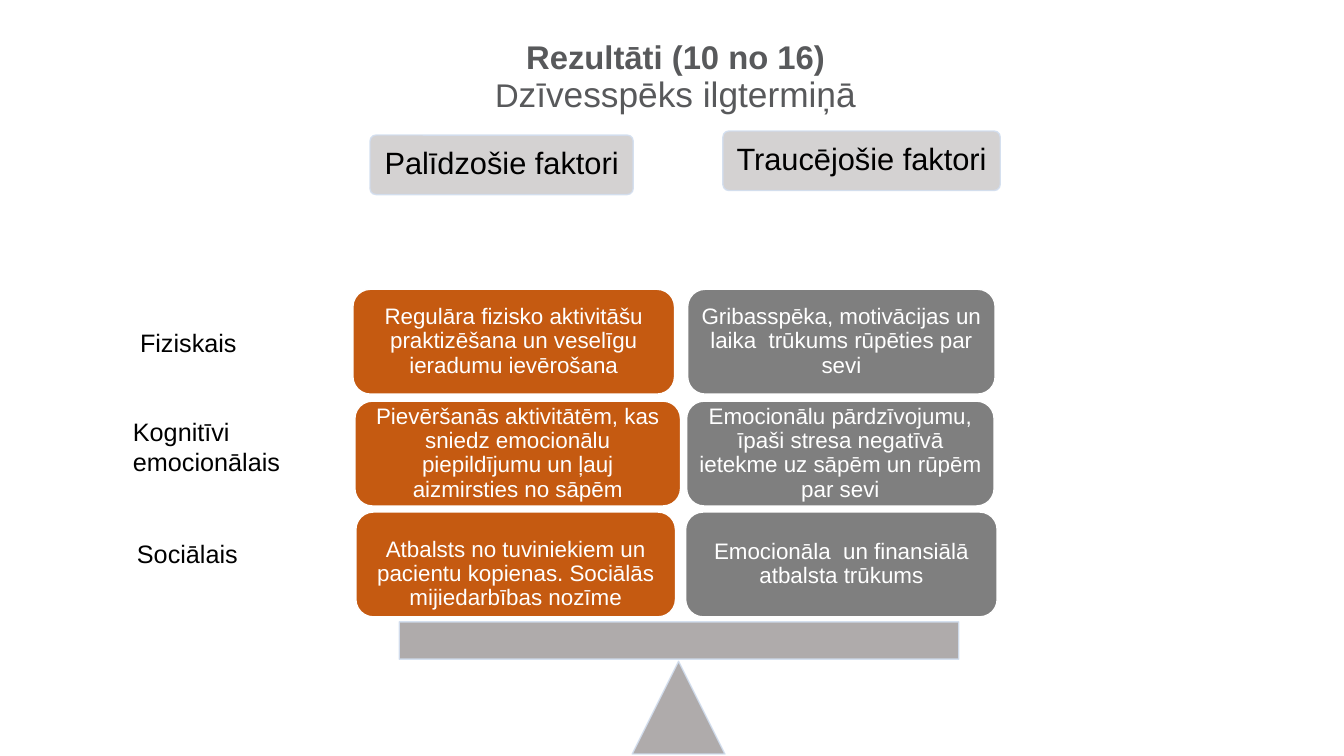
from lxml import etree
from pptx import Presentation
from pptx import util as u
from pptx.dml.color import RGBColor
from pptx.enum import shapes, text
from pptx.oxml.ns import qn

PX = u.Inches(1) // 100
FONT = "Arial"
WHITE, BLACK, TITLE = "FFFFFF", "000000", "58595B"
ORANGE, GREY, PALE, STONE, EDGE = "C55A11", "7F7F7F", "D0CECE", "AFABAB", "D2DEEF"

TITLE_LINES = [
    [("Rezultāti (10 no 16)", 23.4, True)],
    [("D", 23.4, False), ("zīvesspēks ilgtermiņā", 25.2, False)],
]
HEADERS = [
    ("Palīdzošie faktori", 367, 134, 261),
    ("Traucējošie faktori", 717, 130, 275),
]
LABELS = [
    ("Fiziskais", 129, 320, 162, 40),
    ("Kognitīvi emocionālais", 122, 408, 169, 71),
    ("Sociālais", 126, 529, 162, 40),
]
ROW_TOPS = [287, 398, 508]
ROW_HEIGHT = 104
FACTORS = [
    (ORANGE, [
        ("Regulāra fizisko aktivitāšu praktizēšana un veselīgu ieradumu ievērošana", 350, 319, 7),
        ("Pievēršanās aktivitātēm, kas sniedz emocionālu piepildījumu un ļauj aizmirsties no sāpēm", 352, 323, 7),
        ("Atbalsts no tuviniekiem un pacientu kopienas. Sociālās mijiedarbības nozīme", 353, 317, 20),
    ]),
    (GREY, [
        ("Gribasspēka, motivācijas un laika  trūkums rūpēties par sevi", 682, 305, 7),
        ("Emocionālu pārdzīvojumu, īpaši stresa negatīvā ietekme uz sāpēm un rūpēm par sevi", 681, 305, 7),
        ("Emocionāla  un finansiālā atbalsta trūkums", 680, 309, 7),
    ]),
]
BALANCE = [
    (shapes.MSO_SHAPE.ISOSCELES_TRIANGLE, 627, 656, 92, 92),
    (shapes.MSO_SHAPE.RECTANGLE, 396, 617, 555, 37),
]


def box(*lengths):
    return [n * PX for n in lengths]


def paint(fmt, color, alpha=100):
    fmt.solid()
    fmt.fore_color.rgb = RGBColor.from_string(color)
    if alpha < 100:
        clr = fmt._xPr.find(qn("a:solidFill"))[0]
        etree.SubElement(clr, qn("a:alpha"), val=str(alpha * 1000))


def add_run(p, words, size=18, color=BLACK, bold=False):
    r = p.add_run()
    r.text = words
    r.font.name, r.font.size, r.font.bold = FONT, u.Pt(size), bold
    r.font.color.rgb = RGBColor.from_string(color)


def write(sp, words, size=18, color=BLACK, align=text.PP_ALIGN.CENTER,
          anchor=text.MSO_ANCHOR.MIDDLE, spacing=0.9, insets=(7, 7, 7, 7)):
    tf = sp.text_frame
    tf.word_wrap = True
    tf.vertical_anchor = anchor
    tf.margin_left, tf.margin_top, tf.margin_right, tf.margin_bottom = box(*insets)
    p = tf.paragraphs[0]
    p.alignment, p.line_spacing = align, spacing
    add_run(p, words, size=size, color=color)


def add_panel(slide, kind, bounds, fill, edge, alpha=100, edge_alpha=100):
    sp = slide.shapes.add_shape(kind, *box(*bounds))
    sp.shadow.inherit = False
    paint(sp.fill, fill, alpha)
    sp.line.width = u.Pt(1)
    paint(sp.line.fill, edge, edge_alpha)
    return sp


def add_title(slide):
    sp = slide.shapes.title
    sp.left, sp.top, sp.width, sp.height = box(95, 41, 1150, 113)
    tf = sp.text_frame
    tf.word_wrap = True
    tf.auto_size = text.MSO_AUTO_SIZE.NONE
    tf.vertical_anchor = text.MSO_ANCHOR.TOP
    tf.margin_left = tf.margin_top = tf.margin_right = tf.margin_bottom = 0
    p = tf.paragraphs[0]
    p.alignment, p.line_spacing = text.PP_ALIGN.CENTER, 0.9
    for i, line in enumerate(TITLE_LINES):
        if i:
            p.add_line_break()
        for words, size, bold in line:
            add_run(p, words, size=size, color=TITLE, bold=bold)


def main():
    prs = Presentation()
    prs.slide_width, prs.slide_height = u.Inches(13.33), u.Inches(7.5)
    slide = prs.slides.add_slide(prs.slide_layouts[5])
    add_title(slide)
    rounded = shapes.MSO_SHAPE.ROUNDED_RECTANGLE

    for words, left, top, width in HEADERS:
        sp = add_panel(slide, rounded, (left, top, width, 59), PALE, EDGE, 90, 90)
        sp.adjustments[0] = 0.1
        write(sp, words, size=22, insets=(9, 9, 9, 9))

    for kind, *bounds in BALANCE:
        add_panel(slide, kind, bounds, STONE, EDGE, edge_alpha=90)

    for color, cells in FACTORS:
        for top, (words, left, width, inset_top) in zip(ROW_TOPS, cells):
            sp = add_panel(slide, rounded, (left, top, width, ROW_HEIGHT), color, WHITE)
            inset_bottom = 7 if inset_top == 7 else 0
            write(sp, words, size=16, color=WHITE, insets=(7, inset_top, 7, inset_bottom))

    for words, *bounds in LABELS:
        sp = slide.shapes.add_textbox(*box(*bounds))
        write(sp, words, align=text.PP_ALIGN.LEFT, anchor=text.MSO_ANCHOR.TOP,
              spacing=1.0, insets=(10, 5, 10, 5))

    prs.save("out.pptx")


if __name__ == "__main__":
    main()
